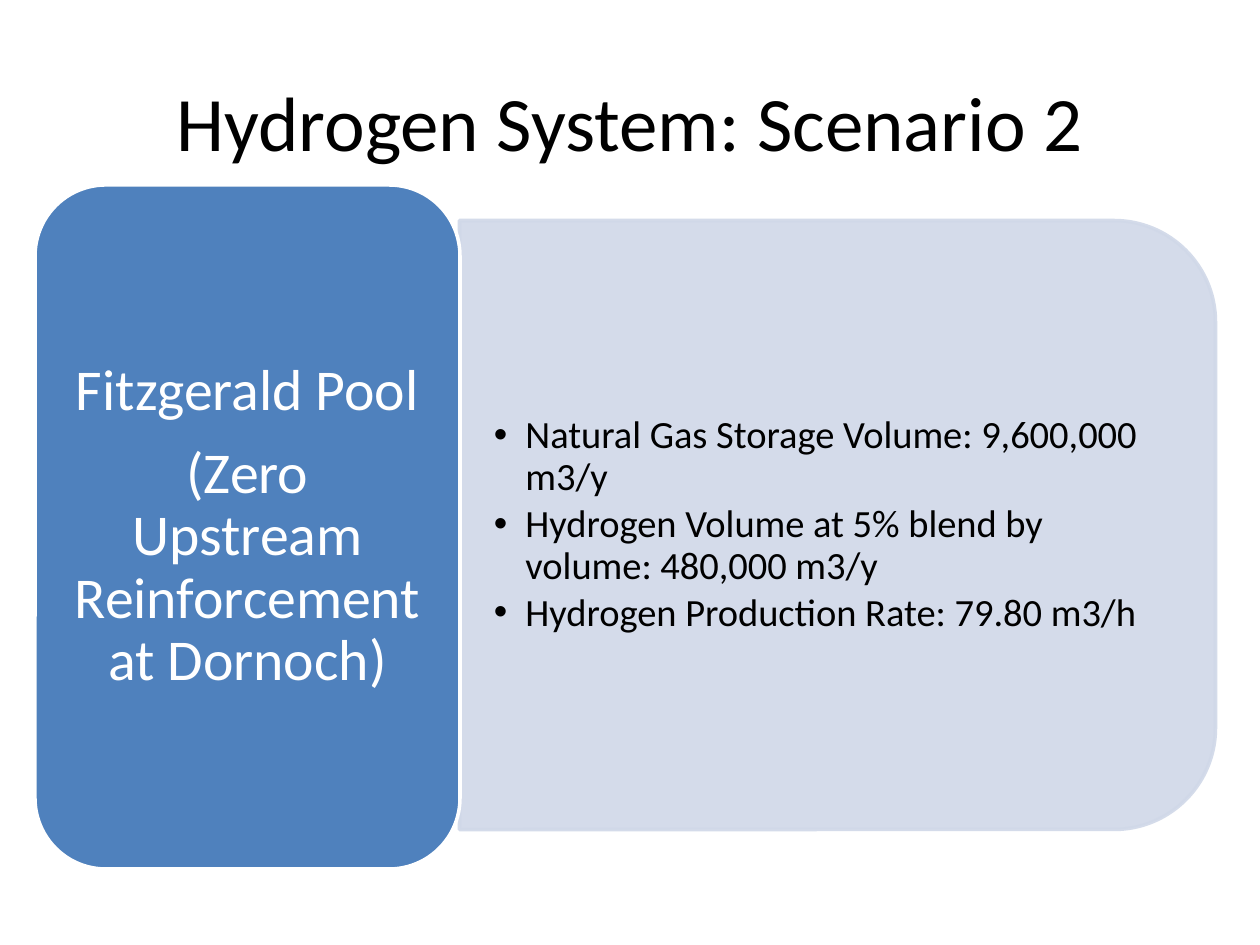
"""Build the slide on the second hydrogen system scenario."""
from lxml.etree import SubElement
from pptx import Presentation
from pptx.dml.color import RGBColor
from pptx.enum.shapes import MSO_SHAPE
from pptx.enum.text import MSO_ANCHOR, PP_ALIGN
from pptx.oxml.ns import qn
from pptx.util import Emu, Pt


def px(*lengths):
    return [Emu(round(length * 914400 / 126)) for length in lengths]


def color(hex_code):
    return RGBColor.from_string(hex_code)


deck = Presentation()
deck.slide_width, deck.slide_height = px(1260, 945)
slide = deck.slides.add_slide(deck.slide_layouts[5])

title = slide.shapes.title
title.left, title.top, title.width, title.height = px(63, 42, 1134, 157)
title.text_frame.text = "Hydrogen System: Scenario 2"
title.text_frame.vertical_anchor = MSO_ANCHOR.MIDDLE

panel = slide.shapes.add_shape(MSO_SHAPE.ROUND_2_SAME_RECTANGLE, *px(533, 147, 609, 756))
panel.rotation = 90
pool = slide.shapes.add_shape(MSO_SHAPE.ROUNDED_RECTANGLE, *px(35, 185, 425, 684))
for shape, fill, line in [(panel, "D0D8E8", "D0D8E8"), (pool, "4F81BD", "FFFFFF")]:
    shape.shadow.inherit = False
    shape.fill.solid()
    shape.fill.fore_color.rgb = color(fill)
    shape.line.color.rgb = color(line)
    shape.line.width = Pt(2)
for panel_color in panel._element.spPr.iter(qn("a:srgbClr")):
    SubElement(panel_color, qn("a:alpha"), val="90000")

figures = slide.shapes.add_textbox(*px(460, 251, 726, 548))
figure_lines = [
    "Natural Gas Storage Volume: 9,600,000 m3/y",
    "Hydrogen Volume at 5% blend by volume: 480,000 m3/y",
    "Hydrogen Production Rate: 79.80 m3/h",
]
pool_lines = ["Fitzgerald Pool", "(Zero Upstream Reinforcement at Dornoch)"]

for shape, lines, side, edge, size, gap, ink, align in [
    (figures, figure_lines, 34, 18, 22, 3.3, "000000", PP_ALIGN.LEFT),
    (pool, pool_lines, 18, 9, 33, 11.55, "FFFFFF", PP_ALIGN.CENTER),
]:
    frame = shape.text_frame
    frame.word_wrap = True
    frame.vertical_anchor = MSO_ANCHOR.MIDDLE
    frame.margin_left, frame.margin_right = px(side, side)
    frame.margin_top, frame.margin_bottom = px(edge, edge)
    frame.text = "\n".join(lines)
    for paragraph in frame.paragraphs:
        paragraph.alignment = align
        paragraph.line_spacing = 0.9
        paragraph.space_after = Pt(gap)

for paragraph in figures.text_frame.paragraphs:
    properties = paragraph._p.get_or_add_pPr()
    properties.set("marL", "228600")
    properties.set("indent", "-228600")
    SubElement(properties, qn("a:buFont"), typeface="Arial")
    SubElement(properties, qn("a:buChar"), char="•")

for shape, size, ink in [(title, 44, "000000"), (figures, 22, "000000"), (pool, 33, "FFFFFF")]:
    for paragraph in shape.text_frame.paragraphs:
        paragraph.font.name = "Calibri"
        paragraph.font.size = Pt(size)
        paragraph.font.color.rgb = color(ink)

deck.save("out.pptx")
